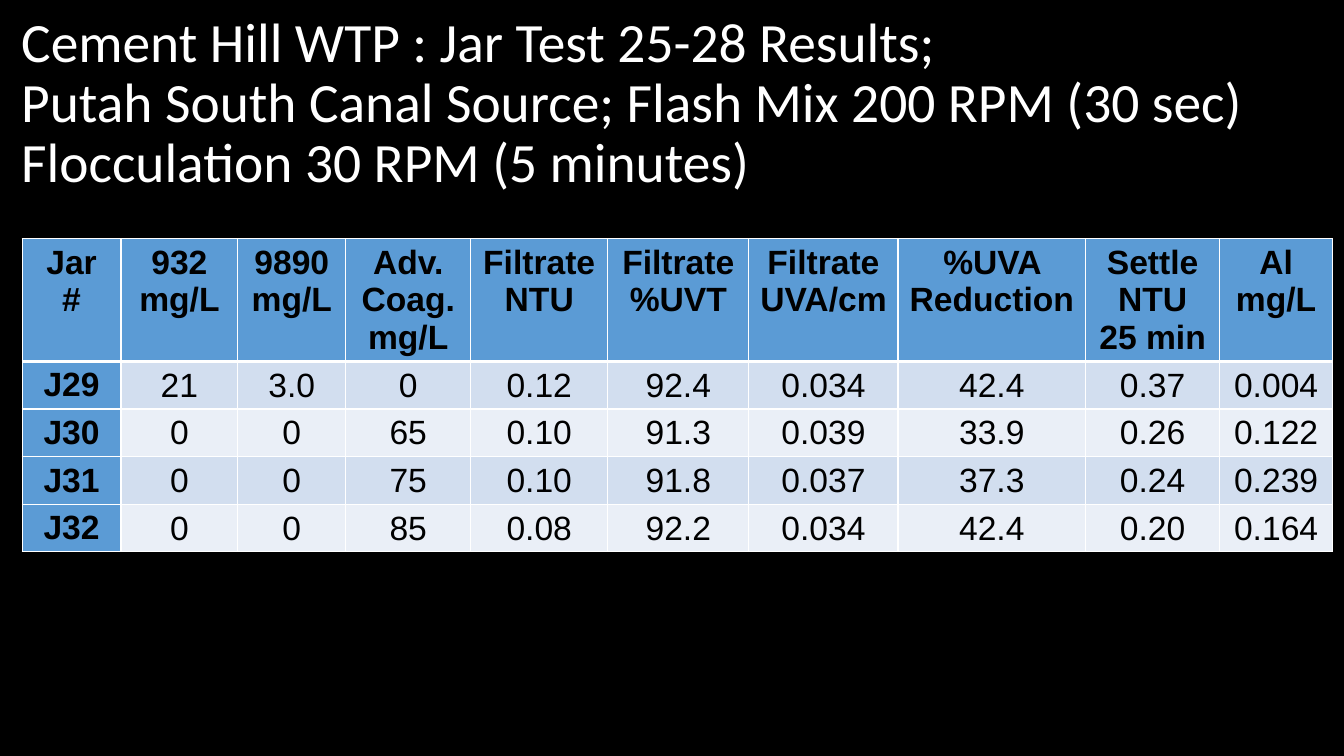
from lxml import etree
from pptx import Presentation
from pptx import util as u
from pptx.dml.color import RGBColor
from pptx.enum import text
from pptx.oxml.ns import qn

TITLE = [
    "Cement Hill WTP : Jar Test 25-28 Results;",
    "Putah South Canal Source; Flash Mix 200 RPM (30 sec)",
    "Flocculation 30 RPM (5 minutes)",
]
HEADERS = [
    "Jar\n#", "932\nmg/L", "9890\nmg/L", "Adv.\nCoag.\nmg/L", "Filtrate\nNTU",
    "Filtrate\n%UVT", "Filtrate\nUVA/cm", "%UVA Reduction",
    "Settle\nNTU\n25 min", "Al\nmg/L",
]
JARS = [
    ["J29", "21", "3.0", "0", "0.12", "92.4", "0.034", "42.4", "0.37", "0.004"],
    ["J30", "0", "0", "65", "0.10", "91.3", "0.039", "33.9", "0.26", "0.122"],
    ["J31", "0", "0", "75", "0.10", "91.8", "0.037", "37.3", "0.24", "0.239"],
    ["J32", "0", "0", "85", "0.08", "92.2", "0.034", "42.4", "0.20", "0.164"],
]
COLUMN_SHARES = [7.35, 8.7, 8.03, 9.3, 10.2, 10.5, 11.1, 13.95, 9.98, 8.4]
ROW_SHARES = [13.87] + [5.87] * len(JARS)


def color(value):
    return RGBColor.from_string(value)


class Deck:
    """Hold the style and current slide; lengths are percent of slide size."""

    ink, paper, accent = "000000", "FFFFFF", "5B9BD5"
    bands = ("D2DEEF", "EAEFF7")

    def __init__(self):
        self.prs = Presentation()
        self.prs.slide_width = u.Inches(13.33)
        self.prs.slide_height = u.Inches(7.5)
        self.s = self.prs.slides.add_slide(self.prs.slide_layouts[5])
        fill = self.s.background.fill
        fill.solid()
        fill.fore_color.rgb = color(self.ink)

    def across(self, share):
        return round(self.prs.slide_width * share / 100)

    def down(self, share):
        return round(self.prs.slide_height * share / 100)

    def run(self, p, words, size, font, ink, bold=False):
        r = p.add_run()
        r.text = words
        r.font.size, r.font.name, r.font.bold = u.Pt(size), font, bold
        r.font.color.rgb = color(ink)

    def title(self, lines, x, y, w, h):
        sp = self.s.shapes.title
        sp.left, sp.top = self.across(x), self.down(y)
        sp.width, sp.height = self.across(w), self.down(h)
        tf = sp.text_frame
        tf.word_wrap = True
        tf.auto_size = text.MSO_AUTO_SIZE.NONE
        tf.vertical_anchor = text.MSO_ANCHOR.MIDDLE
        p = tf.paragraphs[0]
        p.alignment, p.line_spacing = text.PP_ALIGN.LEFT, 0.9
        for i, line in enumerate(lines):
            if i:
                p.add_line_break()
            self.run(p, line, 39.6, "Calibri", self.paper)

    def borders(self, cell, top, bottom):
        tc_pr = cell._tc.get_or_add_tcPr()
        widths = {"a:lnL": 1, "a:lnR": 1, "a:lnT": top, "a:lnB": bottom}
        for i, (tag, width) in enumerate(widths.items()):
            ln = etree.Element(qn(tag), w=str(u.Pt(width)))
            fill = etree.SubElement(ln, qn("a:solidFill"))
            etree.SubElement(fill, qn("a:srgbClr"), val=self.paper)
            tc_pr.insert(i, ln)

    def cell(self, cell, words, row, col):
        label = row == 0 or col == 0
        cell.fill.solid()
        cell.fill.fore_color.rgb = color(
            self.accent if label else self.bands[(row - 1) % 2])
        side, top, bottom = (0.1, 0.05, 0.05) if label else (0.01, 0.01, 0)
        cell.margin_left = cell.margin_right = u.Inches(side)
        cell.margin_top, cell.margin_bottom = u.Inches(top), u.Inches(bottom)
        cell.vertical_anchor = (
            text.MSO_ANCHOR.TOP if label else text.MSO_ANCHOR.MIDDLE)
        tf = cell.text_frame
        for i, line in enumerate(words.split("\n")):
            p = tf.add_paragraph() if i else tf.paragraphs[0]
            p.alignment = text.PP_ALIGN.CENTER
            self.run(p, line, 24, "Arial", self.ink, label)
        self.borders(cell, 3 if row == 1 else 1, 3 if row == 0 else 1)

    def table(self, rows, columns, heights, x, y, h):
        sp = self.s.shapes.add_table(
            len(rows), len(columns), self.across(x), self.down(y),
            self.across(sum(columns)), self.down(h))
        table = sp.table
        table.first_col = True
        for column, share in zip(table.columns, columns):
            column.width = self.across(share)
        for row, share in zip(table.rows, heights):
            row.height = self.down(share)
        sp.height = self.down(h)
        for i, row in enumerate(rows):
            for j, words in enumerate(row):
                self.cell(table.cell(i, j), words, i, j)


def main():
    deck = Deck()
    deck.title(TITLE, 0.83, 1.6, 97.6, 24.4)
    deck.table([HEADERS] + JARS, COLUMN_SHARES, ROW_SHARES, 1.65, 31.6, 44)
    deck.prs.save("out.pptx")


if __name__ == "__main__":
    main()
